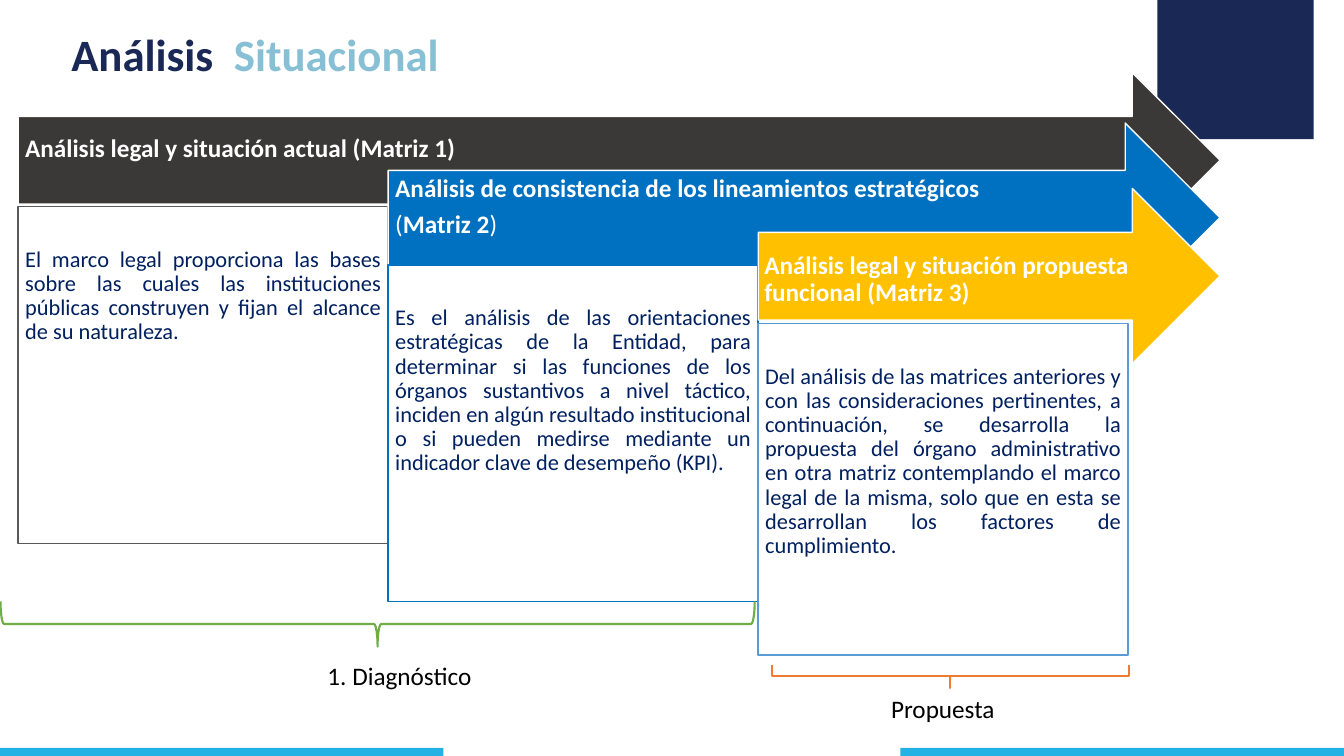
from pptx import Presentation
from pptx.dml.color import RGBColor
from pptx.enum.shapes import MSO_SHAPE
from pptx.enum.text import MSO_ANCHOR, PP_ALIGN
from pptx.util import Inches, Pt

RECT, ARROW, BRACE = MSO_SHAPE.RECTANGLE, MSO_SHAPE.RIGHT_ARROW, MSO_SHAPE.LEFT_BRACE
TOP, MIDDLE = MSO_ANCHOR.TOP, MSO_ANCHOR.MIDDLE
LEFT, JUSTIFY = PP_ALIGN.LEFT, PP_ALIGN.JUSTIFY

HUES = {
    "navy": "192854", "sky": "87C0D5", "cyan": "23B2E3", "white": "FFFFFF",
    "coal": "3B3838", "grey": "595959", "blue": "0070C0", "gold": "FFC000",
    "steel": "5B9BD5", "ink": "002060", "green": "70AD47", "orange": "ED7D31",
    "black": "000000",
}
WIDE, HIGH = 13.33, 7.5
EDGE, COL, TIP = 0.18, 3.67, 12.1   # left margin, column width, arrow tips
FIRST, STEP = 2.05, 0.58            # top of the first panel, drop per stage
PAD = 0.07

deck = Presentation()
deck.slide_width, deck.slide_height = Inches(WIDE), Inches(HIGH)
slide = deck.slides.add_slide(deck.slide_layouts[6])


def draw(kind, box, fill=None, line=None, weight=1):
    """Add a preset shape; box is left, top, width, height in inches."""
    shape = slide.shapes.add_shape(kind, *map(Inches, box))
    shape.shadow.inherit = False
    if fill:
        shape.fill.solid()
        shape.fill.fore_color.rgb = RGBColor.from_string(HUES[fill])
    else:
        shape.fill.background()
    if line:
        shape.line.color.rgb = RGBColor.from_string(HUES[line])
        shape.line.width = Pt(weight)
    else:
        shape.line.fill.background()
    return shape


def write(shape, paras, size, pads, anchor=TOP, align=LEFT, space=0.9):
    """Fill a shape with paragraphs, each a list of (text, hue, bold)."""
    frame = shape.text_frame
    frame.word_wrap = True
    frame.vertical_anchor = anchor
    (frame.margin_left, frame.margin_top,
     frame.margin_right, frame.margin_bottom) = map(Inches, pads)
    for i, runs in enumerate(paras):
        para = frame.add_paragraph() if i else frame.paragraphs[0]
        para.alignment, para.line_spacing = align, space
        if i < len(paras) - 1:
            para.space_after = Pt(0.35 * size)
        for text, hue, bold in runs:
            run = para.add_run()
            run.text = text
            run.font.name, run.font.size, run.font.bold = "Calibri", Pt(size), bold
            run.font.color.rgb = RGBColor.from_string(HUES[hue])


# Footer bars, title and corner block
bar = WIDE * 0.33
for left in (0, WIDE - bar):
    draw(RECT, (left, 7.42, bar, HIGH - 7.42), "cyan")

title = slide.shapes.add_textbox(*map(Inches, (0.61, 0.34, 8.53, 0.45)))
write(title, [[("Análisis  ", "navy", True), ("Situacional", "sky", True)]],
      32, (0.1, 0.05, 0.1, 0.05), MIDDLE)
draw(RECT, (11.48, 0, 1.55, 1.38), "navy")

# Stages: arrow top and height, fill, heading, heading pads and anchor,
# panel height, panel line, panel text
STAGES = [
    (0.72, 1.74, "coal",
     [[("Análisis legal y situación actual (Matriz 1)", "white", True)]],
     (PAD, PAD, 0.28, 0.28), MIDDLE, 3.34, "grey",
     "El marco legal proporciona las bases sobre las cuales las instituciones "
     "públicas construyen y fijan el alcance de su naturaleza."),
    (1.22, 1.88, "blue",
     [[("Análisis de consistencia de los lineamientos estratégicos", "white", True)],
      [("(", "white", False), ("Matriz 2", "white", True), (")", "white", False)]],
     (PAD, PAD, 0.28, 0.28), MIDDLE, 3.34, "blue",
     "Es el análisis de las orientaciones estratégicas de la Entidad, para "
     "determinar si las funciones de los órganos sustantivos a nivel táctico, "
     "inciden en algún resultado institucional o si pueden medirse mediante un "
     "indicador clave de desempeño (KPI)."),
    (1.87, 1.74, "gold",
     [[("Análisis legal y situación propuesta funcional (Matriz 3)", "white", True)]],
     (0.06, 0.2, 0.28, 0), TOP, 3.29, "steel",
     "Del análisis de las matrices anteriores y con las consideraciones "
     "pertinentes, a continuación, se desarrolla la propuesta del órgano "
     "administrativo en otra matriz contemplando el marco legal de la misma, "
     "solo que en esta se desarrollan los factores de cumplimiento."),
]
for i, (top, tall, fill, head, pads, anchor, deep, line, body) in enumerate(STAGES):
    left = EDGE + i * COL
    arrow = draw(ARROW, (left, top, TIP - left, tall), fill, "white")
    write(arrow, head, 18, pads, anchor)
    panel = draw(RECT, (left, FIRST + i * STEP, COL, deep), "white", line)
    write(panel, [[(body, "ink", False)]], 16, (PAD, 0.41, PAD, PAD), TOP, JUSTIFY)

# Braces under the panels, each with its label
BRACES = [
    ((3.52, 2.45, 0.45, 7.48), 0.08, "green", (3.15, 6.5), "1. Diagnóstico"),
    ((9.31, 4.94, 0.23, 3.54), 0, "orange", (8.74, 6.83), "Propuesta"),
]
for box, curve, hue, spot, text in BRACES:
    brace = draw(BRACE, box, None, hue, 1.5)
    brace.rotation = 270
    brace.adjustments[0] = curve
    label = slide.shapes.add_textbox(*map(Inches, (*spot, 1.73, 0.4)))
    write(label, [[(text, "black", False)]], 18, (0.1, 0.05, 0.1, 0.05), space=1)

deck.save("out.pptx")
